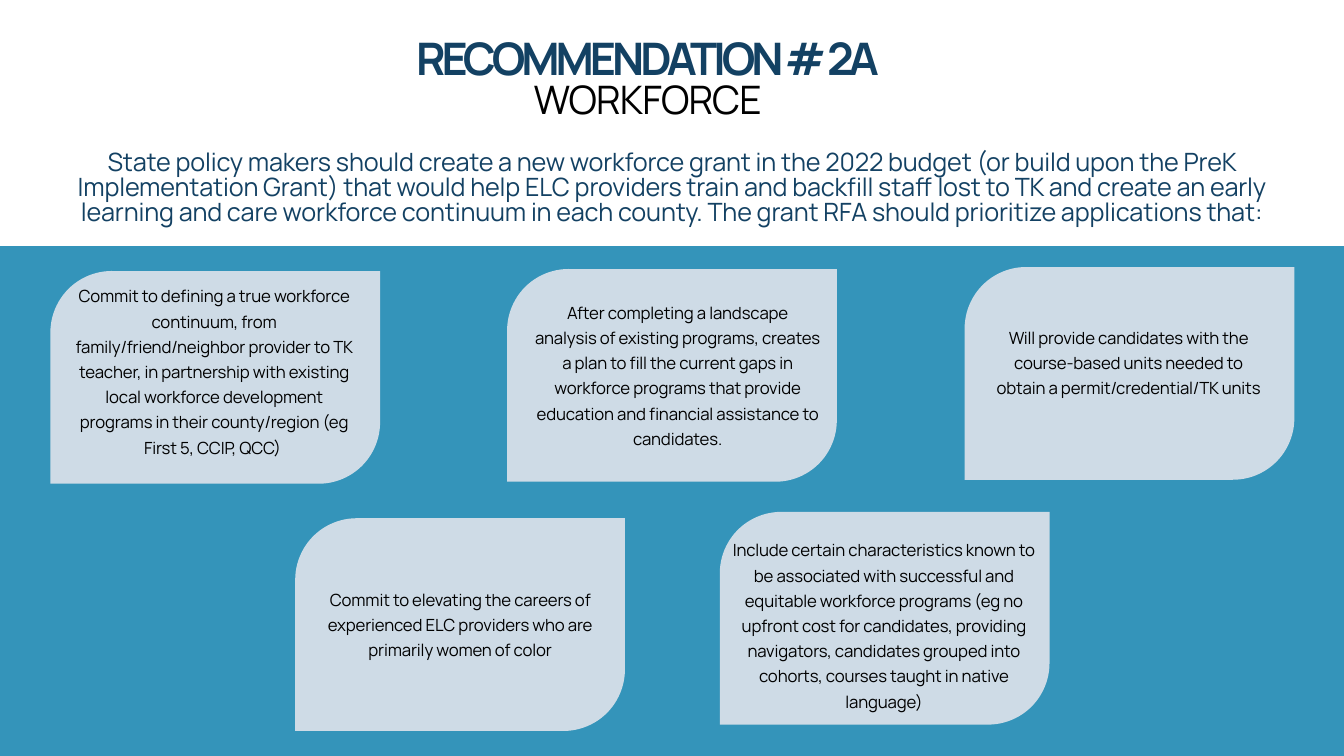
from pptx import Presentation
from pptx import util as u
from pptx.dml.color import RGBColor
from pptx.enum import shapes, text

NAVY, BLUE, PALE, BLACK = "134163", "3494BA", "CEDBE6", "000000"
CARD_WIDTH, CARD_HEIGHT = 8.31, 5.36

# Card left and top, then the box of its wording, in centimetres
CARDS = [
    (1.27, 6.83, (1.55, 6.96, 7.7, 5.33),
     "Commit to defining a true workforce continuum, from "
     "family/friend/neighbor provider to TK teacher, in partnership with "
     "existing local workforce development programs in their county/region "
     "(eg First 5, CCIP, QCC) "),
    (12.78, 6.78, (13.23, 7.37, 7.7, 4.06),
     "After completing a landscape analysis of existing programs, creates a "
     "plan to fill the current gaps in workforce programs that provide "
     "education and financial assistance to candidates."),
    (24.31, 6.73, (24.84, 8, 7.21, 2.77),
     "Will provide candidates with the course-based units needed to obtain "
     "a permit/credential/TK units"),
    (7.44, 13.06, (7.75, 14.61, 7.7, 2.13),
     "Commit to elevating the careers of experienced ELC providers who are "
     "primarily women of color"),
    (18.14, 12.9, (18.19, 13.36, 8.18, 4.7),
     "Include certain characteristics known to be associated with "
     "successful and equitable workforce programs (eg no upfront cost for "
     "candidates, providing navigators, candidates grouped into cohorts, "
     "courses taught in native language)"),
]
INTRO = (
    "State policy makers should create a new workforce grant in the 2022 "
    "budget (or build upon the PreK Implementation Grant) that would help "
    "ELC providers train and backfill staff lost to TK and create an early "
    "learning and care workforce continuum in each county. The grant RFA "
    "should prioritize applications that:")


def rgb(hex_colour):
    return RGBColor.from_string(hex_colour)


def add_panel(slide, kind, box, colour):
    panel = slide.shapes.add_shape(kind, *map(u.Cm, box))
    panel.shadow.inherit = False
    panel.fill.solid()
    panel.fill.fore_color.rgb = rgb(colour)
    panel.line.fill.background()
    return panel


def write(holder, wording, size, colour, leading=18, tracking=-0.1,
          bold=False, anchor=text.MSO_ANCHOR.TOP):
    """Put one centred paragraph in a shape; leading and tracking in points."""
    frame = holder.text_frame
    frame.text = wording
    frame.word_wrap = True
    frame.auto_size = text.MSO_AUTO_SIZE.SHAPE_TO_FIT_TEXT
    frame.vertical_anchor = anchor
    paragraph = frame.paragraphs[0]
    paragraph.alignment = text.PP_ALIGN.CENTER
    paragraph.line_spacing = u.Pt(leading)
    paragraph.space_before = u.Pt(0)
    run = paragraph.runs[0]
    run.font.name = "Manrope"
    run.font.size = u.Pt(size)
    run.font.bold = bold
    run.font.color.rgb = rgb(colour)
    run._r.get_or_add_rPr().set("spc", str(round(tracking * 100)))


def add_text(slide, box, *wording, **style):
    write(slide.shapes.add_textbox(*map(u.Cm, box)), *wording, **style)


def add_title(slide, box, *wording, **style):
    title = slide.shapes.title
    title.left, title.top, title.width, title.height = map(u.Cm, box)
    write(title, *wording, **style)


def add_card(slide, left, top, wording_box, wording):
    card = add_panel(slide, shapes.MSO_SHAPE.ROUND_2_DIAG_RECTANGLE,
                     (left, top, CARD_WIDTH, CARD_HEIGHT), PALE)
    card.adjustments[0] = 0.289
    card.adjustments[1] = 0
    add_text(slide, wording_box, wording, 12, BLACK)


def main():
    deck = Presentation()
    deck.slide_width, deck.slide_height = u.Cm(33.87), u.Cm(19.05)
    slide = deck.slides.add_slide(deck.slide_layouts.get_by_name("Title Only"))

    add_title(slide, (1.5, -0.89, 29.64, 3.15), "RECOMMENDATION # 2A", 32, NAVY,
              leading=94, tracking=-2.9, bold=True,
              anchor=text.MSO_ANCHOR.BOTTOM)
    add_text(slide, (1.5, 2.21, 29.64, 1.09), "WORKFORCE", 28, BLACK,
             leading=21, tracking=-0.6)
    add_text(slide, (0.56, 3.33, 32.74, 2.87), INTRO, 18, NAVY,
             anchor=text.MSO_ANCHOR.MIDDLE)

    add_panel(slide, shapes.MSO_SHAPE.RECTANGLE, (0, 6.2, 33.87, 12.85), BLUE)
    for card in CARDS:
        add_card(slide, *card)
    deck.save("out.pptx")


if __name__ == "__main__":
    main()
